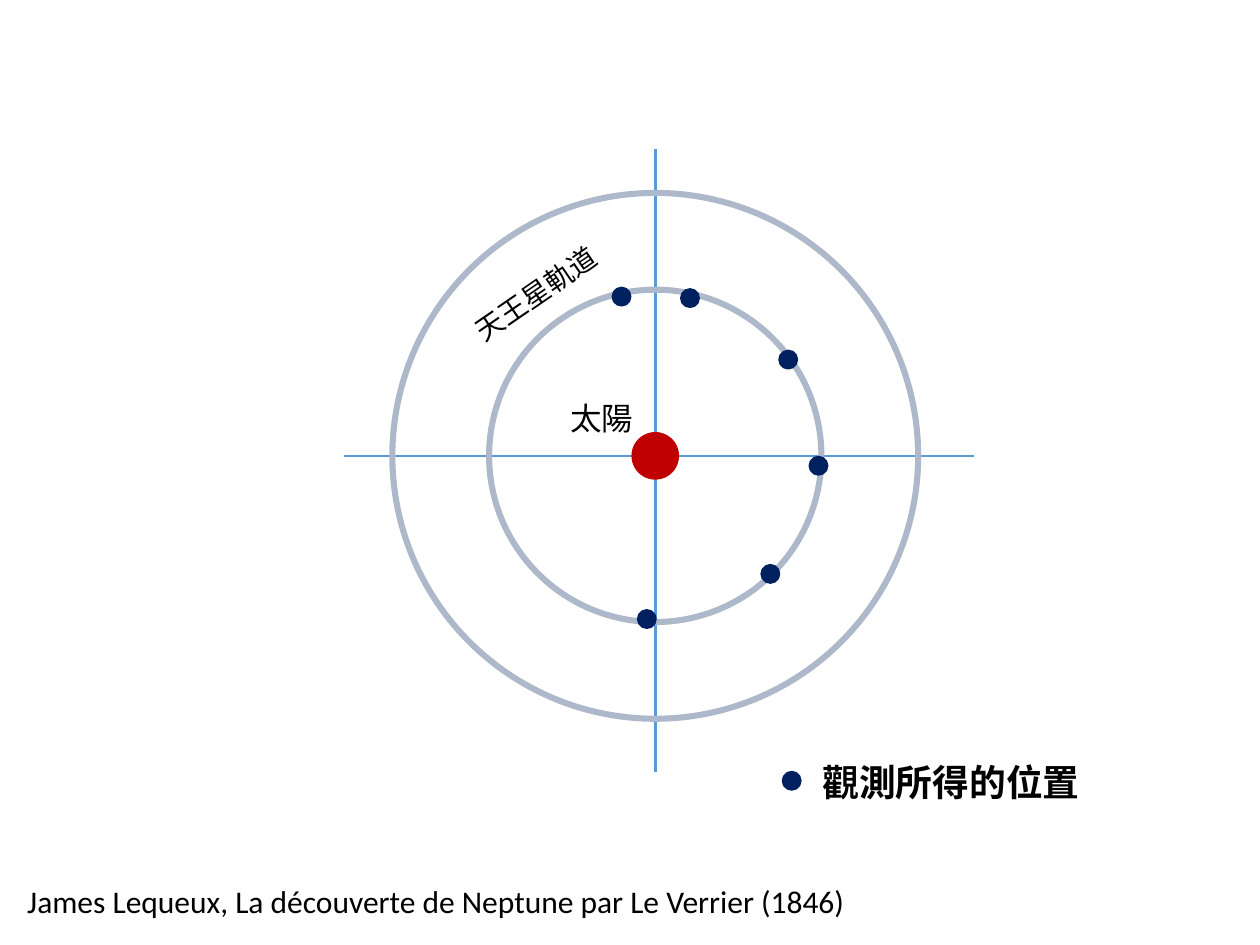
from lxml import etree
from pptx import Presentation
from pptx import util as u
from pptx.dml.color import RGBColor
from pptx.enum import shapes, text
from pptx.oxml.ns import qn

AXIS_BLUE = RGBColor(0x5B, 0x9B, 0xD5)
ORBIT_GREY = RGBColor(0xAD, 0xB9, 0xCA)
POSITION_NAVY = RGBColor(0x00, 0x20, 0x60)
SUN_RED = RGBColor(0xC0, 0x00, 0x00)
BLACK = RGBColor(0x00, 0x00, 0x00)
CJK_FONT = "Noto Sans CJK SC"

deck = Presentation()
deck.slide_width, deck.slide_height = u.Cm(25.4), u.Cm(19.05)
slide = deck.slides.add_slide(deck.slide_layouts[6])


def add_circle(x, y, diameter, fill=None, line=None, width=0):
    circle = slide.shapes.add_shape(
        shapes.MSO_SHAPE.OVAL, u.Cm(x - diameter / 2), u.Cm(y - diameter / 2),
        u.Cm(diameter), u.Cm(diameter))
    circle.shadow.inherit = False
    if fill is None:
        circle.fill.background()
    else:
        circle.fill.solid()
        circle.fill.fore_color.rgb = fill
    if line is None:
        circle.line.fill.background()
    else:
        circle.line.color.rgb = line
        circle.line.width = u.Pt(width)


def add_label(words, box, size, font="Calibri", bold=False, wrap=False, rotation=0):
    label = slide.shapes.add_textbox(*(u.Cm(length) for length in box))
    label.rotation = rotation
    frame = label.text_frame
    frame.word_wrap = wrap
    frame.auto_size = text.MSO_AUTO_SIZE.SHAPE_TO_FIT_TEXT
    run = frame.paragraphs[0].add_run()
    run.text = words
    run.font.size = u.Pt(size)
    run.font.bold = bold
    run.font.color.rgb = BLACK
    run.font.name = font
    east_asian = etree.SubElement(run.font._element, qn("a:ea"))
    east_asian.set("typeface", CJK_FONT)


sun_x, sun_y = 13.21, 9.19

for x1, y1, x2, y2 in [(sun_x, 3, sun_x, 15.57), (6.93, sun_y, 19.63, sun_y)]:
    axis = slide.shapes.add_connector(
        shapes.MSO_CONNECTOR.STRAIGHT, u.Cm(x1), u.Cm(y1), u.Cm(x2), u.Cm(y2))
    axis.line.color.rgb = AXIS_BLUE
    axis.line.width = u.Pt(1.5)
    etree.SubElement(axis._element.spPr, qn("a:effectLst"))

for orbit_diameter in (6.7, 10.6):
    add_circle(sun_x, sun_y, orbit_diameter, line=ORBIT_GREY, width=3.5)

add_circle(sun_x, sun_y, 0.96, fill=SUN_RED)

observed_positions = [(12.53, 5.98), (13.91, 6.01), (15.89, 7.25),
                      (16.5, 9.39), (15.53, 11.57), (13.04, 12.48)]
legend_mark = (15.96, 15.74)
for x, y in observed_positions + [legend_mark]:
    add_circle(x, y, 0.33, fill=POSITION_NAVY, line=POSITION_NAVY, width=2)

add_label("觀測所得的位置", (16.33, 15.19, 5.74, 1.14), 21, font=CJK_FONT, bold=True)
add_label("James Lequeux, La découverte de Neptune par Le Verrier (1846)",
          (0.3, 17.65, 17.15, 1.02), 18, wrap=True)
add_label("天王星軌道", (9.14, 5.44, 3.35, 0.94), 16, rotation=325.5)
add_label("太陽", (11.25, 7.92, 1.8, 1.02), 18)

deck.save("out.pptx")
